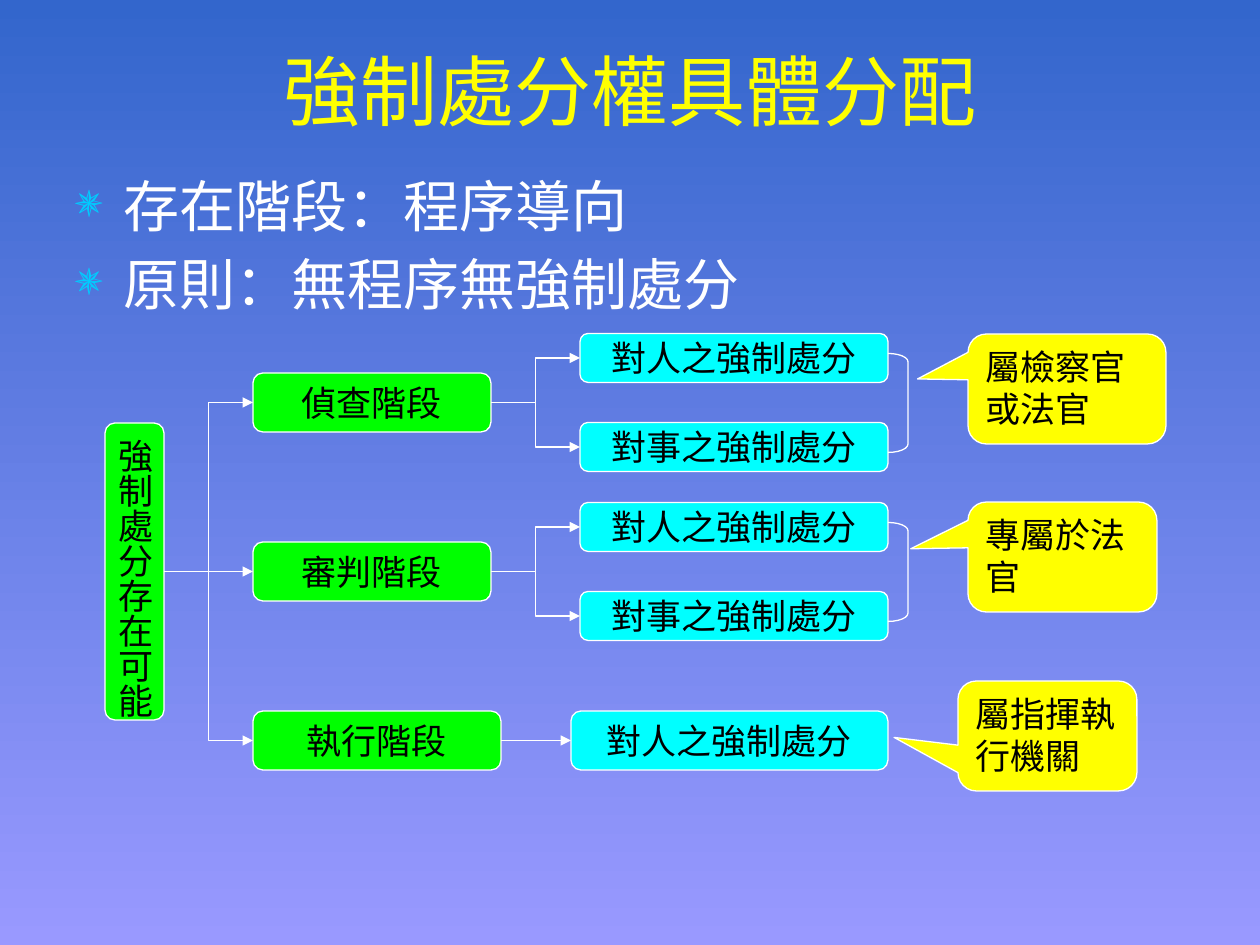
from lxml.etree import SubElement
from pptx import Presentation
from pptx.dml.color import RGBColor
from pptx.enum.shapes import MSO_CONNECTOR, MSO_SHAPE
from pptx.enum.text import MSO_ANCHOR, PP_ALIGN
from pptx.oxml.ns import qn
from pptx.util import Pt

SCALE = 914400 / 126
COLORS = {
    "sky": "3366CC", "haze": "9999FF", "title": "FFFF00", "text": "FFFFFF",
    "bullet": "00CCFF", "stage": "00FF00", "act": "00FFFF", "note": "FFFF00",
    "line": "FFFFFF", "ink": "000000",
}

TITLE = "強制處分權具體分配"
POINTS = ["存在階段：程序導向", "原則：無程序無強制處分"]
ROOT = "強制處分存在可能"
PERSON, THING = "對人之強制處分", "對事之強制處分"
# Each callout: text, left, top, width, pointer x and y
STAGES = [
    {"name": "偵查階段", "wide": 238, "acts": [PERSON, THING],
     "note": ("屬檢察官或法官", 968, 334, 198, -0.755, -0.091)},
    {"name": "審判階段", "wide": 238, "acts": [PERSON, THING],
     "note": ("專屬於法官", 968, 502, 189, -0.803, -0.075)},
    {"name": "執行階段", "wide": 248, "acts": [PERSON],
     "note": ("屬指揮執行機關", 958, 681, 179, -0.857, 0.013)},
]

STAGE_X, STAGE_Y, STAGE_H, STEP = 253, 373, 59, 169
ACT_RIGHT, ACT_W, ACT_H, ACT_GAP = 888, 308, 49, 89
LONE_W = 317
NOTE_H = 110
BRACKET_W, BRACKET_H = 20, 99

BOX = {"word_wrap": False, "vertical_anchor": MSO_ANCHOR.MIDDLE}
NOTE = {"word_wrap": True, "vertical_anchor": MSO_ANCHOR.TOP}


def px(*sizes):
    return [round(size * SCALE) for size in sizes]


def rgb(name):
    return RGBColor.from_string(COLORS[name])


def write(para, text, size, font, color, align):
    para.alignment = align
    run = para.add_run()
    run.text = text
    for key, value in {"size": Pt(size), "name": font}.items():
        setattr(run.font, key, value)
    run.font.color.rgb = rgb(color)


def trim(line):
    line.color.rgb = rgb("line")
    line.width = Pt(0.75)


def draw(slide, kind, place, fill=None):
    shape = slide.shapes.add_shape(kind, *px(*place))
    shape.shadow.inherit = False
    trim(shape.line)
    if fill:
        shape.fill.solid()
        shape.fill.fore_color.rgb = rgb(fill)
    else:
        shape.fill.background()
    return shape


def label(shape, text, frame, align):
    for key, value in frame.items():
        setattr(shape.text_frame, key, value)
    write(shape.text_frame.paragraphs[0], text, 20, "Roboto", "ink", align)


def add_box(slide, text, place, fill):
    box = draw(slide, MSO_SHAPE.FLOWCHART_ALTERNATE_PROCESS, place, fill)
    label(box, text, BOX, PP_ALIGN.CENTER)
    return box


def add_note(slide, text, left, top, width, tip_x, tip_y):
    place = (left, top, width, NOTE_H)
    note = draw(slide, MSO_SHAPE.ROUNDED_RECTANGULAR_CALLOUT, place, "note")
    for spot, value in enumerate((tip_x, tip_y, 0.167)):
        note.adjustments[spot] = value
    label(note, text, NOTE, PP_ALIGN.LEFT)


def join(slide, start, end, kind=MSO_CONNECTOR.ELBOW):
    """Run an arrow from the right side of start to the left side of end."""
    arrow = slide.shapes.add_connector(kind, 0, 0, 0, 0)
    arrow.begin_connect(start, 3)
    arrow.end_connect(end, 1)
    trim(arrow.line)
    props = arrow.element.spPr
    SubElement(props.find(qn("a:ln")), qn("a:tailEnd"), type="triangle")
    SubElement(props, qn("a:effectLst"))


def add_title(slide):
    title = slide.shapes.title
    title.left, title.top, title.width, title.height = px(42, 31, 1177, 117)
    title.text_frame.vertical_anchor = MSO_ANCHOR.MIDDLE
    write(title.text_frame.paragraphs[0], TITLE, 44, "Arial", "title",
          PP_ALIGN.CENTER)


def add_points(slide):
    frame = slide.shapes.add_textbox(*px(63, 165, 1134, 680)).text_frame
    frame.word_wrap = True
    indent = px(48)[0]
    for spot, text in enumerate(POINTS):
        para = frame.add_paragraph() if spot else frame.paragraphs[0]
        write(para, text, 32, "Arial", "text", PP_ALIGN.LEFT)
        para.space_before = Pt(6.4)
        props = para._p.get_or_add_pPr()
        props.set("marL", str(indent))
        props.set("indent", str(-indent))
        tint = SubElement(props, qn("a:buClr"))
        SubElement(tint, qn("a:srgbClr"), val=COLORS["bullet"])
        SubElement(props, qn("a:buSzPct"), val="85000")
        SubElement(props, qn("a:buChar"), char="✵")


def add_stage(slide, root, row, name, wide, acts, note):
    top = STAGE_Y + row * STEP
    stage = add_box(slide, name, (STAGE_X, top, wide, STAGE_H), "stage")
    join(slide, root, stage)
    if len(acts) == 1:
        place = (ACT_RIGHT - LONE_W, top, LONE_W, STAGE_H)
        act = add_box(slide, acts[0], place, "act")
        join(slide, stage, act, MSO_CONNECTOR.STRAIGHT)
    else:
        first = top + (STAGE_H - ACT_GAP - ACT_H) / 2
        for spot, text in enumerate(acts):
            place = (ACT_RIGHT - ACT_W, first + spot * ACT_GAP, ACT_W, ACT_H)
            join(slide, stage, add_box(slide, text, place, "act"))
        place = (ACT_RIGHT, first + 20, BRACKET_W, BRACKET_H)
        bracket = draw(slide, MSO_SHAPE.RIGHT_BRACKET, place)
        bracket.adjustments[0] = 0.415
    add_note(slide, *note)


def main():
    deck = Presentation()
    deck.slide_width, deck.slide_height = px(1260, 945)
    slide = deck.slides.add_slide(deck.slide_layouts[5])
    back = slide.background.fill
    back.gradient()
    back.gradient_angle = 270
    for stop, name in zip(back.gradient_stops, ("sky", "haze")):
        stop.color.rgb = rgb(name)
    add_title(slide)
    add_points(slide)
    root = add_box(slide, ROOT, (105, 423, 59, 297), "stage")
    root.element.txBody.bodyPr.set("vert", "eaVert")
    for row, stage in enumerate(STAGES):
        add_stage(slide, root, row, **stage)
    deck.save("out.pptx")


if __name__ == "__main__":
    main()
